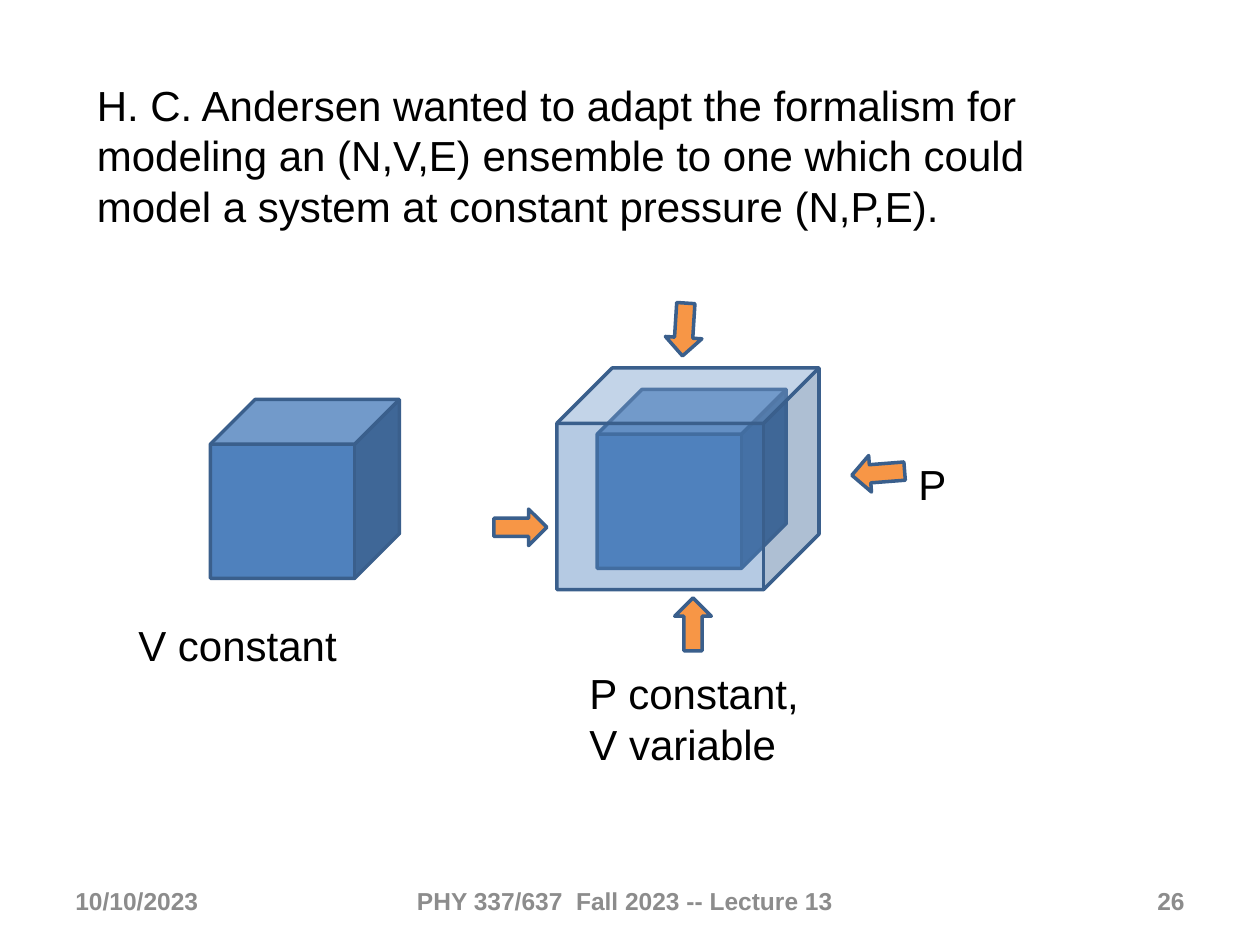
import pptx
import pptx.util
import pptx.dml.color
import pptx.enum.shapes
import pptx.enum.text
import pptx.oxml.ns
from lxml import etree

PX = 9144  # 100 px to the inch
SLIDE_SIZE = (1000, 750)
SHAPES = pptx.enum.shapes.MSO_SHAPE
ALIGN = pptx.enum.text.PP_ALIGN
ANCHOR = pptx.enum.text.MSO_ANCHOR

THEME = {
    "font": "Arial",
    "body": {"size": 24, "bold": False, "color": "000000"},
    "footer": {"size": 14, "bold": True, "color": "8C8C8C"},
    "cube": "4F81BD",
    "arrow": "F79646",
    "outline": "3A5F8C",
    "outline_width": 2,
}

# text, (left, top, width, height), alignment
FOOTERS = [
    ("10/10/2023", (50, 695, 233, 40), ALIGN.LEFT),
    ("PHY 337/637  Fall 2023 -- Lecture 13", (300, 695, 392, 40), ALIGN.CENTER),
    ("26", (717, 695, 233, 40), ALIGN.RIGHT),
]
BODY_TEXTS = [
    ("H. C. Andersen wanted to adapt the formalism for modeling an (N,V,E) ensemble "
     "to one which could model a system at constant pressure (N,P,E).", (67, 58, 817, 131)),
    ("V constant", (100, 487, 217, 50)),
    ("P", (719, 359, 140, 50)),
    ("P constant, V variable", (458, 525, 217, 91)),
]
# (left, top, width, height), opacity in percent
CUBES = [
    ((167, 317, 150, 142), 100),
    ((474, 309, 150, 142), 100),
    ((442, 292, 208, 176), 42),
]
# left, top, rotation
PRESSURE_ARROWS = [(522, 247, 93.6), (392, 404, 0), (529, 481, 270), (676, 361, 175.5)]
ARROW_SIZE = (42, 29)


def emu(lengths):
    return [length * PX for length in lengths]


def rgb(code):
    return pptx.dml.color.RGBColor.from_string(code)


def add_text(slide, text, box, style, alignment=ALIGN.LEFT, anchor=ANCHOR.TOP):
    frame = slide.shapes.add_textbox(*emu(box)).text_frame
    frame.word_wrap = True
    frame.vertical_anchor = anchor
    paragraph = frame.paragraphs[0]
    paragraph.alignment = alignment
    run = paragraph.add_run()
    run.text = text
    font_format = {
        "name": THEME["font"],
        "size": pptx.util.Pt(style["size"]),
        "bold": style["bold"],
    }
    for name, value in font_format.items():
        setattr(run.font, name, value)
    run.font.color.rgb = rgb(style["color"])


def add_solid(slide, kind, box, color, opacity=100, rotation=0):
    shape = slide.shapes.add_shape(kind, *emu(box))
    shape.shadow.inherit = False
    shape.rotation = rotation
    shape.fill.solid()
    shape.fill.fore_color.rgb = rgb(color)
    shape.line.color.rgb = rgb(THEME["outline"])
    shape.line.width = pptx.util.Pt(THEME["outline_width"])
    if opacity < 100:
        qn = pptx.oxml.ns.qn
        fill_color = shape.element.spPr.find(qn("a:solidFill")).find(qn("a:srgbClr"))
        etree.SubElement(fill_color, qn("a:alpha")).set("val", str(opacity * 1000))


def main():
    presentation = pptx.Presentation()
    presentation.slide_width, presentation.slide_height = emu(SLIDE_SIZE)
    slide = presentation.slides.add_slide(presentation.slide_layouts[6])

    for text, box, alignment in FOOTERS:
        add_text(slide, text, box, THEME["footer"], alignment, ANCHOR.MIDDLE)
    for box, opacity in CUBES:
        add_solid(slide, SHAPES.CUBE, box, THEME["cube"], opacity)
    for left, top, rotation in PRESSURE_ARROWS:
        add_solid(slide, SHAPES.RIGHT_ARROW, (left, top, *ARROW_SIZE), THEME["arrow"],
                  rotation=rotation)
    for text, box in BODY_TEXTS:
        add_text(slide, text, box, THEME["body"])

    presentation.save("out.pptx")


if __name__ == "__main__":
    main()
